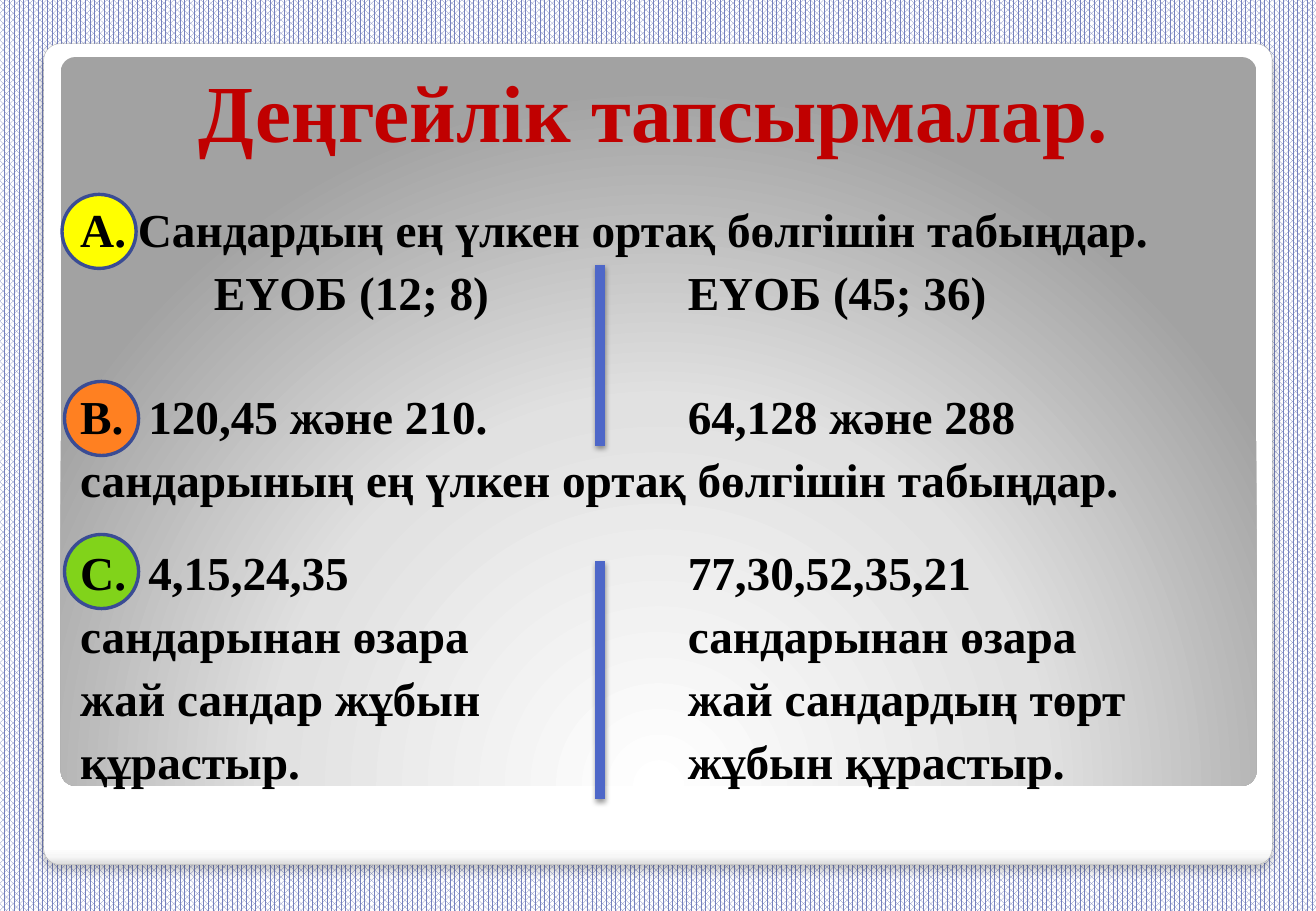
import pptx
import pptx.dml.color
import pptx.enum.dml
import pptx.enum.shapes
import pptx.enum.text
import pptx.oxml
import pptx.oxml.ns
import pptx.util

Pt = pptx.util.Pt
Inches = pptx.util.Inches
SHAPE = pptx.enum.shapes.MSO_SHAPE
ALIGN = pptx.enum.text.PP_ALIGN
ANCHOR = pptx.enum.text.MSO_ANCHOR
qn = pptx.oxml.ns.qn

# Grid of 100 columns by 100 rows over the slide
WIDTH, HEIGHT = Inches(10.83), Inches(7.5)
COL, ROW = WIDTH / 100, HEIGHT / 100

CARD = (3.32, 4.8, 93.35, 90.13)
PANEL = (4.62, 6.27, 90.86, 80)
HEADING = (4.89, 8, 89.57, 10.13)
TASKS = (4.25, 20.67, 89.57, 67.2)

# Badges: column and row inside the task area, fill
BADGES = [(0.65, 38, "81D31A"), (0.65, 21.2, "FF8021"), (0.46, 0.67, "FFFF00")]
BADGE_SIZE = Inches(0.61)

# Dividers: first and last row inside the task area
DIVIDER_COL = 41.37
DIVIDERS = [(8.4, 28.27), (40.93, 67.07)]

# Task lines: text, space before in points, tab stops in inches
GAP, RIGHT = 3.7, 5
TASK_LINES = [
    ("А. Сандардың ең үлкен ортақ бөлгішін табыңдар.", GAP, []),
    ("\tЕҮОБ (12; 8)\tЕҮОБ (45; 36)", GAP, [1.1, RIGHT]),
    ("В.\t120,45 және 210.\t64,128 және 288", 39.8, [0.56, RIGHT]),
    ("сандарының ең үлкен ортақ бөлгішін табыңдар.", GAP, []),
    ("С.\t4,15,24,35\t77,30,52,35,21", 21.3, [0.56, RIGHT]),
    ("сандарынан өзара\tсандарынан өзара", GAP, [RIGHT]),
    ("жай сандар жұбын\tжай сандардың төрт", GAP, [RIGHT]),
    ("құрастыр.\tжұбын құрастыр.", GAP, [RIGHT]),
]


def rgb(value):
    return pptx.dml.color.RGBColor.from_string(value)


def place(box):
    left, top, width, height = box
    return round(left * COL), round(top * ROW), round(width * COL), round(height * ROW)


def drawing(tag, attributes="", inner=""):
    return pptx.oxml.parse_xml(
        f'<a:{tag} {pptx.oxml.ns.nsdecls("a")} {attributes}>{inner}</a:{tag}>')


def set_gradient(shape, stops, direction):
    shape.fill.gradient()
    stop_xml = "".join(f'<a:gs pos="{share * 1000}"><a:srgbClr val="{color}"/></a:gs>'
                       for share, color in stops)
    properties = shape.element.spPr
    properties.replace(properties.find(qn("a:gradFill")), drawing(
        "gradFill", 'rotWithShape="1"', f"<a:gsLst>{stop_xml}</a:gsLst>{direction}"))


def set_shadow(part, alpha, blur, distance):
    properties = part.element.spPr
    for effects in properties.findall(qn("a:effectLst")):
        properties.remove(effects)
    properties.append(drawing("effectLst", inner=(
        f'<a:outerShdw blurRad="{Pt(blur)}" dist="{Pt(distance)}" dir="5400000" '
        f'algn="t" rotWithShape="0"><a:srgbClr val="000000">'
        f'<a:alpha val="{alpha * 1000}"/></a:srgbClr></a:outerShdw>')))


def write(paragraph, text, size, color, align=ALIGN.LEFT, before=0, tabs=()):
    paragraph.alignment = align
    paragraph.space_before = Pt(before)
    if tabs:
        stops = "".join(f'<a:tab pos="{Inches(stop)}" algn="l"/>' for stop in tabs)
        paragraph._p.get_or_add_pPr().append(drawing("tabLst", inner=stops))
    run = paragraph.add_run()
    run.text = text
    run.font.name = "Times New Roman"
    run.font.size = Pt(size)
    run.font.bold = True
    run.font.color.rgb = rgb(color)


def rounded(slide, box):
    shape = slide.shapes.add_shape(SHAPE.ROUNDED_RECTANGLE, *place(box))
    shape.adjustments[0] = 0.02
    shape.shadow.inherit = False
    return shape


def draw_backdrop(slide, card_box, panel_box):
    pattern = slide.background.fill
    pattern.patterned()
    pattern.pattern = pptx.enum.dml.MSO_PATTERN.PERCENT_75
    pattern.fore_color.rgb = rgb("7581BD")
    pattern.back_color.rgb = rgb("FFFFFF")

    # White card with a soft shadow
    card = rounded(slide, card_box)
    set_gradient(card, [(0, "FFFFFF"), (98, "FFFFFF"), (99, "F7F7F7"), (100, "DADADA")],
                 '<a:lin ang="5400000" scaled="0"/>')
    card.line.color.rgb = rgb("A4A4A4")
    card.line.width = Pt(0.16)
    set_shadow(card, 25, 6, 4)

    # Grey panel lit from below
    panel = rounded(slide, panel_box)
    set_gradient(panel, [(0, "FFFFFF"), (55, "E1E1E1"), (100, "A2A2A2")],
                 '<a:path path="circle">'
                 '<a:fillToRect l="50000" t="175000" r="50000" b="-75000"/></a:path>')
    panel.line.fill.background()


def draw_heading(slide, box):
    heading = slide.shapes.title
    heading.left, heading.top, heading.width, heading.height = place(box)
    slide.shapes.element.append(heading.element)  # in front of the panel
    frame = heading.text_frame
    frame.vertical_anchor = ANCHOR.BOTTOM
    frame.auto_size = pptx.enum.text.MSO_AUTO_SIZE.NONE
    write(frame.paragraphs[0], "Деңгейлік тапсырмалар.", 48, "C00000", align=ALIGN.CENTER)


def draw_tasks(slide, box):
    left, top = box[:2]

    # Level badges behind the letters
    for col, row, color in BADGES:
        badge = slide.shapes.add_shape(SHAPE.OVAL, round((left + col) * COL),
                                       round((top + row) * ROW), BADGE_SIZE, BADGE_SIZE)
        badge.shadow.inherit = False
        badge.fill.solid()
        badge.fill.fore_color.rgb = rgb(color)
        badge.line.color.rgb = rgb("3A4C94")
        badge.line.width = Pt(2)

    # Task text in two tabbed columns
    frame = slide.shapes.add_textbox(*place(box)).text_frame
    frame.word_wrap = True
    frame.margin_left, frame.margin_top = Inches(0.2), Inches(0.1)
    frame.margin_right, frame.margin_bottom = Inches(0.1), Inches(0.05)
    for index, (text, before, tabs) in enumerate(TASK_LINES):
        paragraph = frame.add_paragraph() if index else frame.paragraphs[0]
        write(paragraph, text, 28, "000000", before=before, tabs=tabs)

    # Dividers between the columns
    x = round((left + DIVIDER_COL) * COL)
    for first, last in DIVIDERS:
        divider = slide.shapes.add_connector(
            pptx.enum.shapes.MSO_CONNECTOR.STRAIGHT,
            x, round((top + first) * ROW), x, round((top + last) * ROW))
        divider.line.color.rgb = rgb("4E67C8")
        divider.line.width = Pt(6)
        set_shadow(divider, 38, 3.1, 1.6)


def main():
    deck = pptx.Presentation()
    deck.slide_width, deck.slide_height = WIDTH, HEIGHT
    slide = deck.slides.add_slide(deck.slide_layouts.get_by_name("Title Only"))
    draw_backdrop(slide, CARD, PANEL)
    draw_heading(slide, HEADING)
    draw_tasks(slide, TASKS)
    deck.save("out.pptx")


if __name__ == "__main__":
    main()
